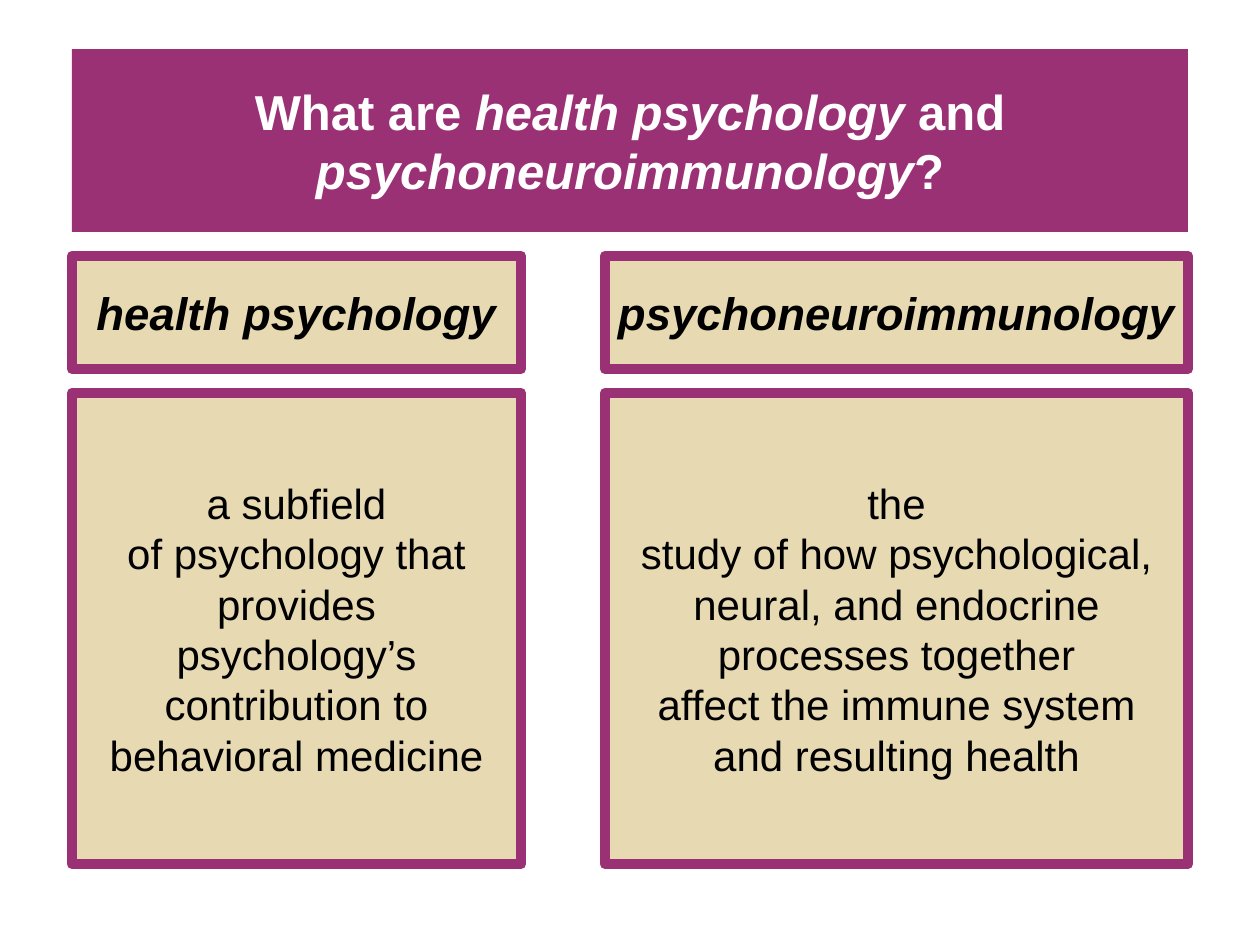
from pptx import Presentation
from pptx.dml.color import RGBColor
from pptx.enum.shapes import MSO_SHAPE
from pptx.enum.text import MSO_ANCHOR, MSO_AUTO_SIZE, PP_ALIGN
from pptx.util import Inches, Pt

RECTANGLE = MSO_SHAPE.RECTANGLE
MIDDLE = MSO_ANCHOR.MIDDLE
CENTER = PP_ALIGN.CENTER
NO_AUTOFIT = MSO_AUTO_SIZE.NONE
PX_PER_INCH = 126
FONT = "Arial"
COLORS = {"plum": "9B3175", "sand": "E7D9B1", "white": "FFFFFF", "black": "000000"}

TITLE = [
    ("What are ", False),
    ("health psychology ", True),
    ("and ", False),
    ("psychoneuroimmunology", True),
    ("?", False),
]
COLUMNS = [
    (72, 449, "health psychology", [
        "a subfield",
        "of psychology that provides",
        "psychology’s contribution to",
        "behavioral medicine",
    ]),
    (605, 583, "psychoneuroimmunology", [
        "the",
        "study of how psychological, neural, and endocrine processes together",
        "affect the immune system and resulting health",
    ]),
]


def px(length):
    """Turn pixels into EMU."""
    return Inches(length / PX_PER_INCH)


def color(name):
    """Look up a colour by name."""
    return RGBColor.from_string(COLORS[name])


def fill(shape, name):
    """Give a shape a solid fill."""
    shape.fill.solid()
    shape.fill.fore_color.rgb = color(name)


def format_span(span, size, color_name, bold=False, italic=False):
    """Set the font of one run."""
    span.font.name = FONT
    span.font.size = Pt(size)
    span.font.color.rgb = color(color_name)
    span.font.bold = bold
    span.font.italic = italic


def add_title(page):
    """Place the title band and its mixed upright and italic words."""
    title = page.shapes.title
    title.left, title.top, title.width, title.height = map(px, (72, 49, 1116, 183))
    fill(title, "plum")
    frame = title.text_frame
    frame.word_wrap = True
    frame.auto_size = NO_AUTOFIT
    frame.vertical_anchor = MIDDLE
    para = frame.paragraphs[0]
    para.alignment = CENTER
    for words, italic in TITLE:
        span = para.add_run()
        span.text = words
        format_span(span, 28, "white", bold=True, italic=italic)


def add_box(page, bounds, lines, size, emphasis=False):
    """Add a framed box with centred text; emphasis keeps it on one line."""
    box = page.shapes.add_shape(RECTANGLE, *map(px, bounds))
    box.shadow.inherit = False
    fill(box, "sand")
    box.line.color.rgb = color("plum")
    box.line.width = Pt(6)
    frame = box.text_frame
    frame.word_wrap = not emphasis
    frame.margin_left = frame.margin_right = px(15)
    frame.vertical_anchor = MIDDLE
    frame.text = "\n".join(lines)
    for para in frame.paragraphs:
        para.alignment = CENTER
        for span in para.runs:
            format_span(span, size, "black", bold=emphasis, italic=emphasis)


def main():
    """Build the slide of two terms and their definitions."""
    deck = Presentation()
    deck.slide_width, deck.slide_height = px(1260), px(945)
    page = deck.slides.add_slide(deck.slide_layouts[5])
    add_title(page)
    for left, width, term, definition in COLUMNS:
        add_box(page, (left, 256, width, 113), [term], 26, emphasis=True)
        add_box(page, (left, 393, width, 471), definition, 24)
    deck.save("out.pptx")


if __name__ == "__main__":
    main()
